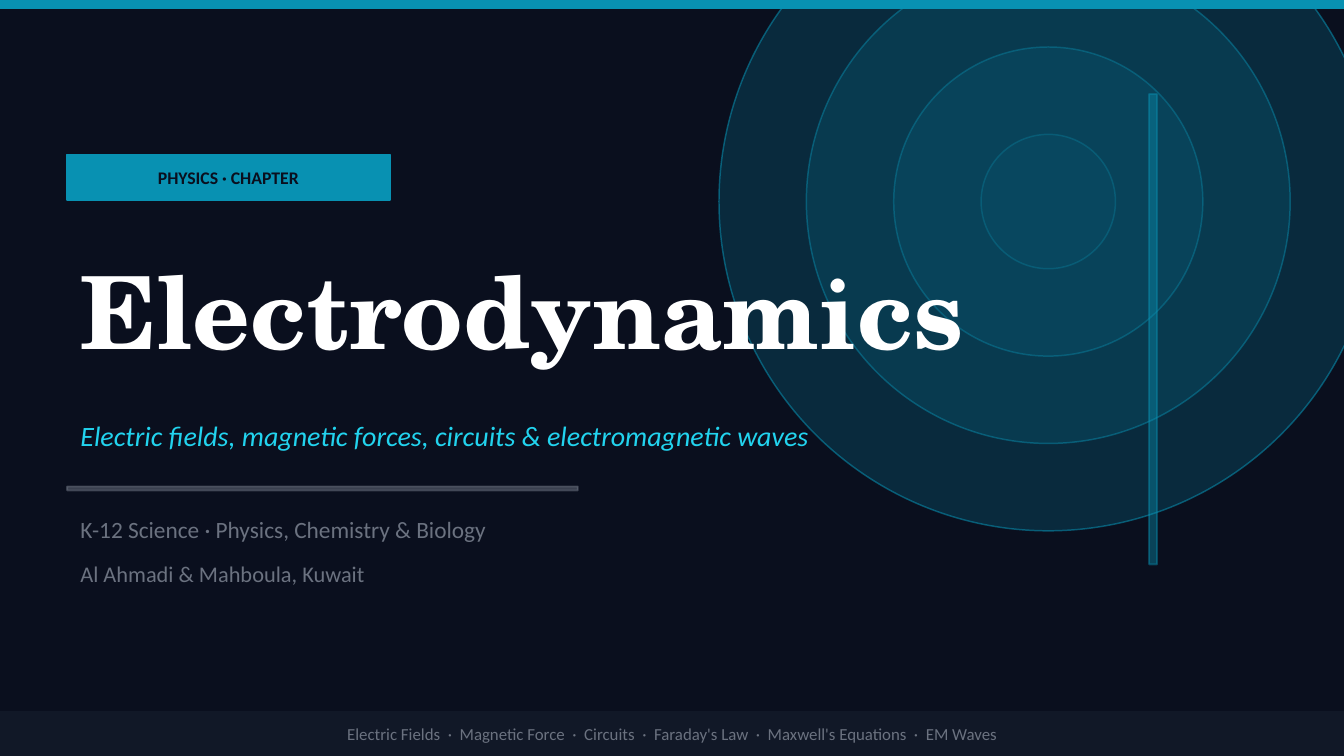
from lxml.etree import SubElement
from pptx import Presentation
from pptx.dml.color import RGBColor
from pptx.enum.shapes import MSO_SHAPE
from pptx.enum.text import MSO_ANCHOR, MSO_AUTO_SIZE, PP_ALIGN
from pptx.oxml.ns import qn
from pptx.util import Inches, Pt

C = {"bg": "0A0F1E", "teal": "0891B2", "cyan": "22D3EE", "gray": "6B7280",
     "panel": "111827", "white": "FFFFFF"}

prs = Presentation()
prs.slide_width = Inches(10)
prs.slide_height = prs.slide_width * 9 // 16
COL, ROW = prs.slide_width / 100, prs.slide_height / 56.25
s = prs.slides.add_slide(prs.slide_layouts[5])
s.background.fill.solid()
s.background.fill.fore_color.rgb = RGBColor.from_string(C["bg"])


def add_block(kind, x, y, w, h, color, fill_alpha=100, line_alpha=100, line_pt=1):
    sp = s.shapes.add_shape(kind, int(x * COL), int(y * ROW), int(w * COL), int(h * ROW))
    sp.shadow.inherit = False
    sp.fill.solid()
    sp.line.fill.solid()
    sp.line.width = Pt(line_pt)
    for fill, alpha in ((sp.fill, fill_alpha), (sp.line.fill, line_alpha)):
        fill.fore_color.rgb = RGBColor.from_string(C[color])
        if alpha < 100:
            clr = fill._xPr.find(".//" + qn("a:srgbClr"))
            SubElement(clr, qn("a:alpha")).set("val", str(alpha * 1000))
    return sp


def write(sp, parts, color, align=PP_ALIGN.LEFT, **font):
    tf = sp.text_frame
    tf.word_wrap = True
    tf.auto_size = MSO_AUTO_SIZE.NONE
    tf.vertical_anchor = MSO_ANCHOR.MIDDLE
    p = tf.paragraphs[0]
    p.alignment = align
    for part in parts:
        r = p.add_run()
        r.text = part
        r.font.color.rgb = RGBColor.from_string(C[color])
        for name, value in ({"name": "Calibri"} | font).items():
            setattr(r.font, name, value)
    return p


add_block(MSO_SHAPE.RECTANGLE, 0, 0, 100, 0.6, "teal")
for i in range(4):
    d = 10 + 13 * i
    add_block(MSO_SHAPE.OVAL, 78 - d / 2, 15 - d / 2, d, d, "teal",
              6 + 5 * i, 30 + 8 * i, 0.8)
add_block(MSO_SHAPE.RECTANGLE, 85.5, 7, 0.6, 35, "teal", 40, 40)

badge = add_block(MSO_SHAPE.RECTANGLE, 5, 11.5, 24, 3.4, "teal")
for side in ("left", "top", "right", "bottom"):
    setattr(badge.text_frame, f"margin_{side}", 0)
write(badge, ["PHYSICS · CHAPTER"], "bg", PP_ALIGN.CENTER, size=Pt(9.5), bold=True)

title = s.shapes.title
title.left, title.top = int(5 * COL), int(16.5 * ROW)
title.width, title.height = int(80 * COL), int(13 * ROW)
s.shapes._spTree.append(title._element)
write(title, ["Electrodynamics"], "white", name="TeX Gyre Schola", size=Pt(54), bold=True)

add_block(MSO_SHAPE.RECTANGLE, 5, 36.2, 38, 0.3, "gray", 50, 50)
for text, y, w, h, color, size, italic in (
    ("Electric fields, magnetic forces, circuits & electromagnetic waves",
     30, 75, 4.8, "cyan", 15, True),
    ("K-12 Science · Physics, Chemistry & Biology", 37.8, 65, 3.2, "gray", 12.5, False),
    ("Al Ahmadi & Mahboula, Kuwait", 41.2, 60, 3, "gray", 12, False),
):
    box = s.shapes.add_textbox(int(5 * COL), int(y * ROW), int(w * COL), int(h * ROW))
    write(box, [text], color, size=Pt(size), italic=italic)

footer = add_block(MSO_SHAPE.RECTANGLE, 0, 53, 100, 3.25, "panel")
topics = ["Electric Fields", "Magnetic Force", "Circuits", "Faraday's Law",
          "Maxwell's Equations", "EM Waves"]
parts = [part for topic in topics for part in (" ", "·", " ", topic)][3:]
p = write(footer, parts, "gray", PP_ALIGN.CENTER, size=Pt(9))
for r in p.runs:
    if r.text == " ":
        r._r.get_or_add_rPr().set("spc", "203")

prs.save("out.pptx")
